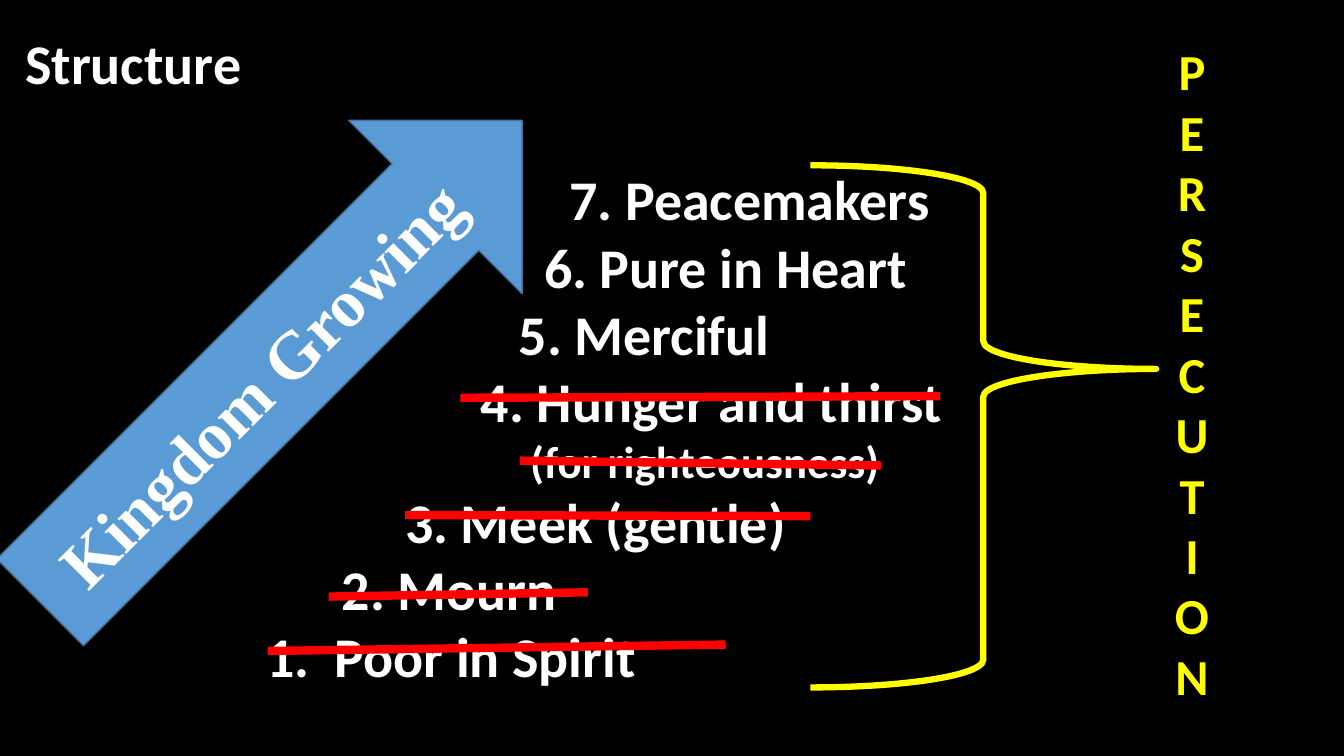
import pptx
import pptx.dml.color
import pptx.enum.shapes
import pptx.enum.text
import pptx.oxml
import pptx.util

WIDTH, HEIGHT = pptx.util.Inches(13.333), pptx.util.Inches(7.5)
INDENT_STEP = int(WIDTH * 0.0094)

# Text, size in points, indent in steps: each stair climbs to the right
BEATITUDES = [
    ("7. Peacemakers", 40, 24),
    ("6. Pure in Heart", 40, 22),
    ("5. Merciful", 40, 20),
    ("4. Hunger and thirst", 40, 17),
    ("(for righteousness)", 32, 20.9),
    ("3. Meek (gentle)", 40, 11),
    ("2. Mourn", 40, 6),
    ("1.  Poor in Spirit", 40, 0),
]

# Start and end of each strike, in percent of the list's box
STRIKES = [
    (0.2, 91.2, 57, 90),
    (7.75, 81, 39.9, 80.2),
    (24.1, 43.7, 83.6, 43.4),
    (17.25, 65.7, 67.5, 65.9),
    (31.5, 55.5, 76.25, 56.4),
]


def color(hex_string):
    return pptx.dml.color.RGBColor.from_string(hex_string)


def share(left, top, width, height):
    """Turn percentages of the slide into a box."""
    return (int(WIDTH * left / 100), int(HEIGHT * top / 100),
            int(WIDTH * width / 100), int(HEIGHT * height / 100))


def move(shape, box):
    shape.left, shape.top, shape.width, shape.height = box


def write(shape, lines, font="Calibri", ink="FFFFFF", align="LEFT", anchor="TOP"):
    """Fill a shape with bold lines, each given as text, size and indent steps."""
    frame = shape.text_frame
    frame.word_wrap = True
    frame.auto_size = pptx.enum.text.MSO_AUTO_SIZE.NONE
    frame.vertical_anchor = getattr(pptx.enum.text.MSO_ANCHOR, anchor)
    frame.margin_left = frame.margin_right = 0
    frame.margin_top = frame.margin_bottom = 0
    for index, (text, size, steps) in enumerate(lines):
        paragraph = frame.add_paragraph() if index else frame.paragraphs[0]
        paragraph.alignment = getattr(pptx.enum.text.PP_ALIGN, align)
        paragraph.line_spacing = 1.0
        paragraph.space_before = paragraph.space_after = pptx.util.Pt(0)
        properties = paragraph._p.get_or_add_pPr()
        properties.set("marL", str(int(steps * INDENT_STEP)))
        properties.set("indent", "0")
        pptx.oxml.xmlchemy.OxmlElement  # bullets are switched off below
        properties.append(pptx.oxml.xmlchemy.OxmlElement("a:buNone"))
        run = paragraph.add_run()
        run.text = text
        run.font.name = font
        run.font.size = pptx.util.Pt(size)
        run.font.bold = True
        run.font.color.rgb = color(ink)


def draw_line(line, ink, points):
    line.color.rgb = color(ink)
    line.width = pptx.util.Pt(points)


def add_title(slide, box):
    move(slide.shapes.title, box)
    write(slide.shapes.title, [("Structure", 40, 0)])


def add_stairs(slide, box):
    body = slide.placeholders[1]
    move(body, box)
    write(body, BEATITUDES)


def add_growth_arrow(slide, box):
    arrow = slide.shapes.add_shape(
        pptx.enum.shapes.MSO_SHAPE.RIGHT_ARROW, *box)
    arrow.rotation = 315
    arrow.shadow.inherit = False
    arrow.fill.solid()
    arrow.fill.fore_color.rgb = color("5B9BD5")
    draw_line(arrow.line, "43739E", 1)
    write(arrow, [("Kingdom Growing", 48, 0)], font="Times New Roman",
          align="CENTER", anchor="MIDDLE")


def add_strikes(slide, box):
    left, top, width, height = box
    for x1, y1, x2, y2 in STRIKES:
        strike = slide.shapes.add_connector(
            pptx.enum.shapes.MSO_CONNECTOR.STRAIGHT,
            left + int(width * x1 / 100), top + int(height * y1 / 100),
            left + int(width * x2 / 100), top + int(height * y2 / 100))
        draw_line(strike.line, "FF0000", 6)
        strike._element.spPr.append(
            pptx.oxml.xmlchemy.OxmlElement("a:effectLst"))


def add_brace(slide, box):
    brace = slide.shapes.add_shape(
        pptx.enum.shapes.MSO_SHAPE.RIGHT_BRACE, *box)
    brace.adjustments[0] = 0.08
    brace.adjustments[1] = 0.39
    brace.shadow.inherit = False
    brace.fill.background()
    draw_line(brace.line, "FFFF00", 4.5)


def add_persecution(slide, box):
    column = slide.shapes.add_textbox(*box)
    write(column, [(letter, 36, 0) for letter in "PERSECUTION"],
          ink="FFFF00", align="CENTER")


def main():
    presentation = pptx.Presentation()
    presentation.slide_width, presentation.slide_height = WIDTH, HEIGHT
    slide = presentation.slides.add_slide(presentation.slide_layouts[1])
    slide.background.fill.solid()
    slide.background.fill.fore_color.rgb = color("000000")

    stairs = share(19.8, 21.81, 60, 70.5)
    add_title(slide, share(1.88, 3.73, 30, 9.04))
    add_stairs(slide, stairs)
    add_growth_arrow(slide, share(-4.43, 31.6, 50.7, 32.4))
    add_strikes(slide, stairs)
    add_brace(slide, share(60.3, 21.87, 25.73, 69.07))
    add_persecution(slide, share(86.4, 5.33, 4.58, 89.5))
    presentation.save("out.pptx")


if __name__ == "__main__":
    main()
